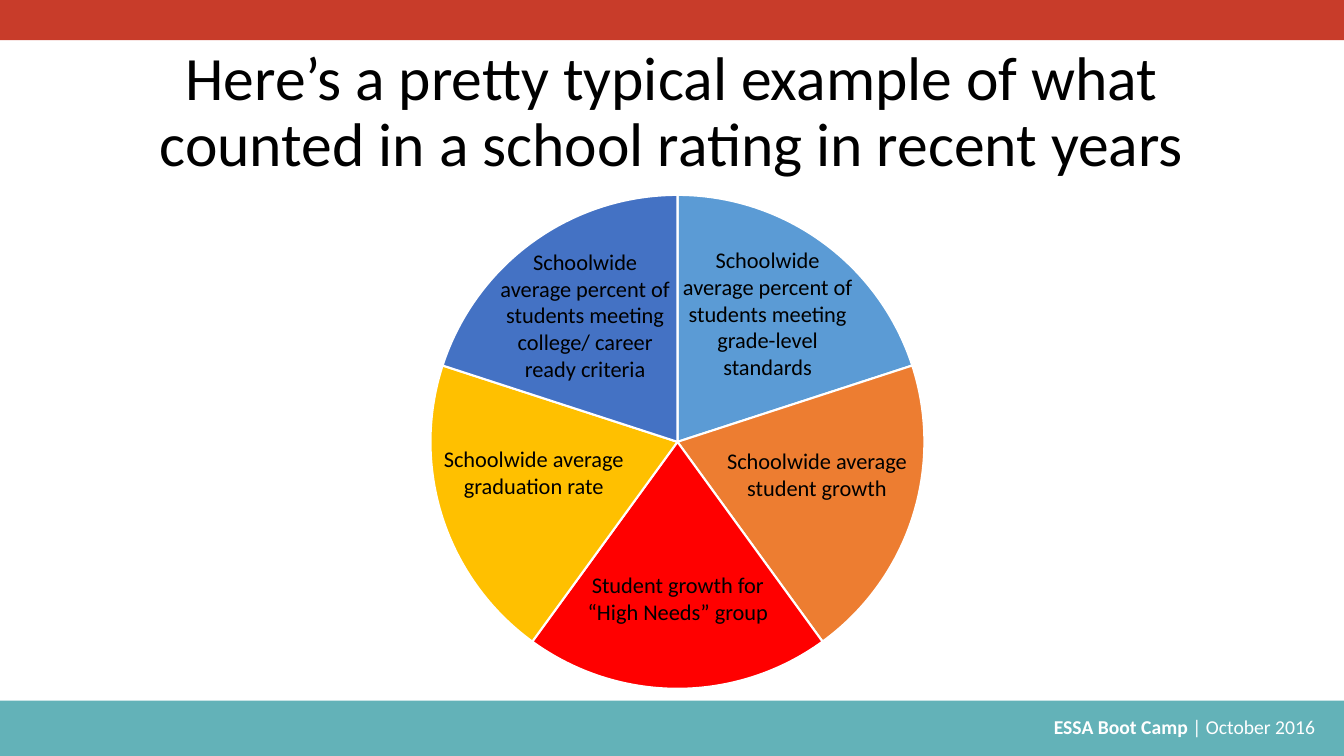
from dataclasses import dataclass
from typing import NamedTuple

from lxml import etree
from pptx import Presentation
from pptx import util as u
from pptx.chart.data import CategoryChartData
from pptx.dml.color import RGBColor
from pptx.enum import chart as ch, shapes, text
from pptx.oxml.ns import qn

BLACK = RGBColor(0x00, 0x00, 0x00)
WHITE = RGBColor(0xFF, 0xFF, 0xFF)
TEAL = RGBColor(0x63, 0xB2, 0xB8)
BRICK = RGBColor(0xC8, 0x3C, 0x2A)
LIGHT_BLUE = RGBColor(0x5B, 0x9B, 0xD5)
ORANGE = RGBColor(0xED, 0x7D, 0x31)
RED = RGBColor(0xFF, 0x00, 0x00)
GOLD = RGBColor(0xFF, 0xC0, 0x00)
BLUE = RGBColor(0x44, 0x72, 0xC4)

FONT = "Calibri"
COLS, ROWS = 80, 45
CELL = u.Inches(7.5) // ROWS


class Box(NamedTuple):
    """Left, top, width and height in grid cells."""
    col: float
    row: float
    cols: float
    rows: float

    def emu(self) -> list[u.Emu]:
        return [u.Emu(round(n * CELL)) for n in self]


@dataclass
class Band:
    box: Box
    color: RGBColor


@dataclass
class Slice:
    label: str
    box: Box
    color: RGBColor
    share: int = 20


BANDS = [
    Band(Box(0, 41.7, COLS, 3.3), TEAL),
    Band(Box(0, 0, COLS, 2.4), BRICK),
]
TITLE = "Here’s a pretty typical example of what counted in a school rating in recent years"
TITLE_BOX = Box(5.5, 2.4, 69, 8.7)
FOOTER_BOX = Box(28.8, 42.24, 50.34, 2.04)
CHART_BOX = Box(16.32, 8.7, 48.06, 36.3)
PLOT = {"x": 0.116, "y": 0.08, "w": 0.767, "h": 0.81}
SLICES = [
    Slice("Schoolwide average percent of students meeting grade-level standards",
          Box(40.02, 14.34, 11.34, 8.7), LIGHT_BLUE),
    Slice("Schoolwide average student growth", Box(41.88, 26.34, 13.5, 3.84), ORANGE),
    Slice("Student growth for “High Needs” group", Box(33.6, 33.72, 13.5, 3.84), RED),
    Slice("Schoolwide average graduation rate", Box(25.02, 26.22, 13.5, 3.84), GOLD),
    Slice("Schoolwide average percent of students meeting college/ career ready criteria",
          Box(29.1, 14.46, 11.46, 8.7), BLUE),
]


def add_band(s, band: Band) -> None:
    sp = s.shapes.add_shape(shapes.MSO_SHAPE.RECTANGLE, *band.box.emu())
    sp.shadow.inherit = False
    sp.fill.solid()
    sp.fill.fore_color.rgb = band.color
    sp.line.fill.background()


def add_run(p, words: str, size: float, color: RGBColor, bold: bool = False) -> None:
    r = p.add_run()
    r.text = words
    r.font.name = FONT
    r.font.size = u.Pt(size)
    r.font.color.rgb = color
    r.font.bold = bold


def add_text_box(s, box: Box, align: text.PP_ALIGN):
    """Add a wrapping text box and return its first paragraph."""
    tf = s.shapes.add_textbox(*box.emu()).text_frame
    tf.word_wrap = True
    tf.auto_size = text.MSO_AUTO_SIZE.SHAPE_TO_FIT_TEXT
    p = tf.paragraphs[0]
    p.alignment = align
    return p


def format_title(s) -> None:
    sp = s.shapes.title
    sp.left, sp.top, sp.width, sp.height = TITLE_BOX.emu()
    tf = sp.text_frame
    tf.auto_size = text.MSO_AUTO_SIZE.NONE
    tf.vertical_anchor = text.MSO_ANCHOR.MIDDLE
    p = tf.paragraphs[0]
    p.alignment = text.PP_ALIGN.CENTER
    p.line_spacing = 0.9
    add_run(p, TITLE, 44, BLACK)


def set_plot_layout(chart) -> None:
    """Fix the inner plot area as shares of the chart's size."""
    area = chart.plots[0]._element.getparent()
    for old in area.findall(qn("c:layout")):
        area.remove(old)
    layout = etree.Element(qn("c:layout"))
    area.insert(0, layout)
    manual = etree.SubElement(layout, qn("c:manualLayout"))
    settings = {"layoutTarget": "inner", "xMode": "edge", "yMode": "edge", **PLOT}
    for tag, value in settings.items():
        etree.SubElement(manual, qn(f"c:{tag}")).set("val", str(value))


def add_pie(s) -> None:
    data = CategoryChartData()
    data.categories = [str(n) for n in range(1, len(SLICES) + 1)]
    data.add_series("Series 1", [sl.share for sl in SLICES])
    chart = s.shapes.add_chart(ch.XL_CHART_TYPE.PIE, *CHART_BOX.emu(), data).chart
    chart.has_title = False
    chart.has_legend = False
    chart.font.name = FONT
    chart.font.size = u.Pt(10)
    chart.font.color.rgb = BLACK
    plot = chart.plots[0]
    plot.vary_by_categories = True
    for i, sl in enumerate(SLICES):
        fmt = plot.series[0].points[i].format
        fmt.fill.solid()
        fmt.fill.fore_color.rgb = sl.color
        fmt.line.color.rgb = WHITE
        fmt.line.width = u.Pt(1.5)
    set_plot_layout(chart)


def main() -> None:
    prs = Presentation()
    prs.slide_width, prs.slide_height = COLS * CELL, ROWS * CELL
    s = prs.slides.add_slide(prs.slide_layouts.get_by_name("Title Only"))
    for band in BANDS:
        add_band(s, band)
    footer = add_text_box(s, FOOTER_BOX, text.PP_ALIGN.RIGHT)
    add_run(footer, "ESSA Boot Camp ", 14, WHITE, bold=True)
    add_run(footer, "| October 2016 ", 14, WHITE)
    format_title(s)
    add_pie(s)
    for sl in SLICES:
        add_run(add_text_box(s, sl.box, text.PP_ALIGN.CENTER), sl.label, 16, BLACK)
    prs.save("out.pptx")


if __name__ == "__main__":
    main()
